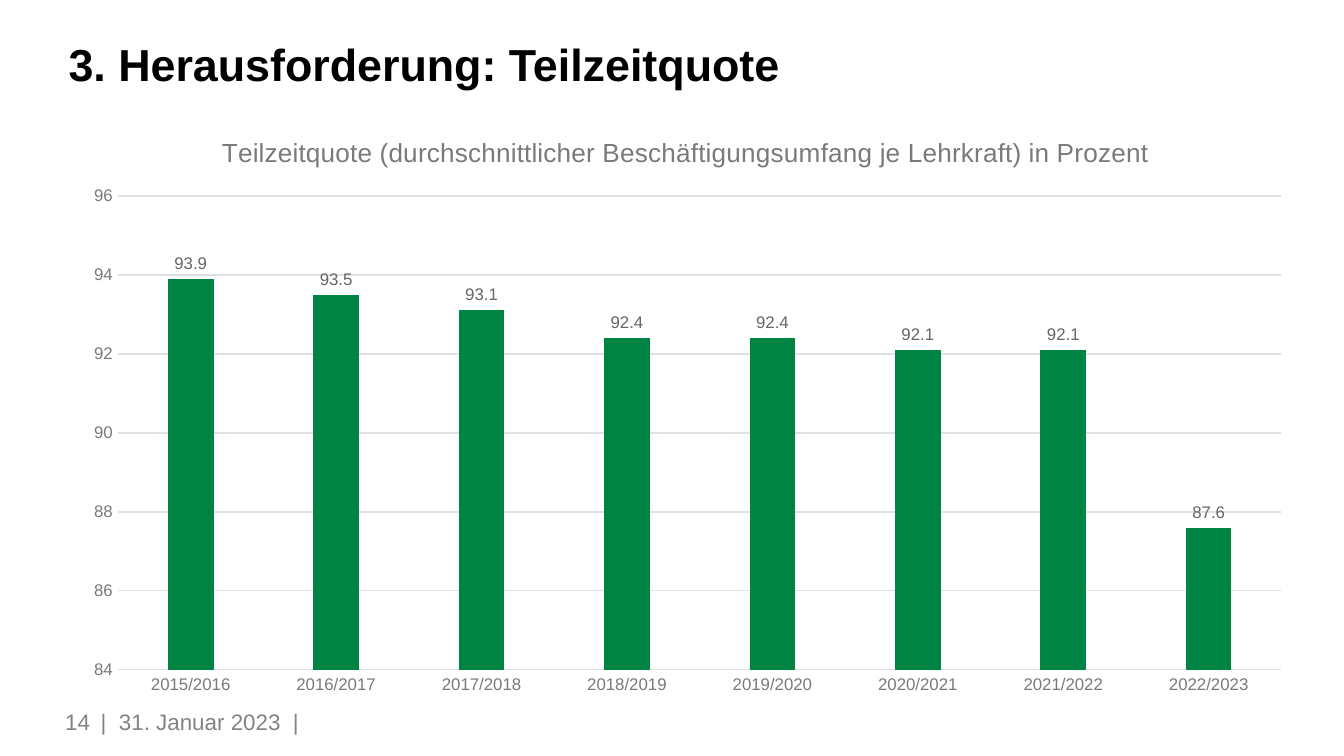
import lxml.etree
import pptx
import pptx.chart.data
import pptx.dml.color
import pptx.enum.chart
import pptx.enum.text
import pptx.oxml.ns
import pptx.util

Inches, Pt = pptx.util.Inches, pptx.util.Pt
Align, Anchor = pptx.enum.text.PP_ALIGN, pptx.enum.text.MSO_ANCHOR
qn = pptx.oxml.ns.qn

TITLE = "3. Herausforderung: Teilzeitquote"
PAGE = "14"
DATE = "|  31. Januar 2023  |"
CHART_TITLE = "Teilzeitquote (durchschnittlicher Beschäftigungsumfang je Lehrkraft) in Prozent"
SERIES = "Series 1"
QUOTAS = {
    "2015/2016": 93.9, "2016/2017": 93.5, "2017/2018": 93.1, "2018/2019": 92.4,
    "2019/2020": 92.4, "2020/2021": 92.1, "2021/2022": 92.1, "2022/2023": 87.6,
}
COLORS = {
    "title": "000000", "footer": "828480", "bar": "008444", "axis": "7A7A7A",
    "grid": "E0E0E0", "label": "666666", "chart": "333333",
}
FONT = "Arial"


def rgb(name):
    return pptx.dml.color.RGBColor.from_string(COLORS[name])


def style(font, size, color, bold=False):
    font.name, font.size, font.bold = FONT, Pt(size), bold
    font.color.rgb = rgb(color)


def write(sp, text, size, color, bold=False, align=Align.LEFT, anchor=Anchor.MIDDLE):
    tf = sp.text_frame
    tf.word_wrap = True
    tf.auto_size = pptx.enum.text.MSO_AUTO_SIZE.NONE
    tf.margin_left = tf.margin_right = tf.margin_top = tf.margin_bottom = 0
    tf.vertical_anchor = anchor
    p = tf.paragraphs[0]
    p.alignment = align
    r = p.add_run()
    r.text = text
    style(r.font, size, color, bold)


def place(sp, *box):
    sp.left, sp.top, sp.width, sp.height = map(Inches, box)


def set_layout(parent, after=None, inner=False, **fractions):
    """Fix the position of a chart part, in fractions of the chart's size."""
    for old in parent.findall(qn("c:layout")):
        parent.remove(old)
    layout = lxml.etree.Element(qn("c:layout"))
    manual = lxml.etree.SubElement(layout, qn("c:manualLayout"))
    settings = {"layoutTarget": "inner"} if inner else {}
    settings.update(xMode="edge", yMode="edge", **fractions)
    for tag, value in settings.items():
        lxml.etree.SubElement(manual, qn("c:" + tag)).set("val", str(value))
    parent.insert(0 if after is None else parent.index(after) + 1, layout)


def style_axis(axis):
    style(axis.tick_labels.font, 9, "axis")
    axis.major_tick_mark = axis.minor_tick_mark = pptx.enum.chart.XL_TICK_MARK.NONE


def style_line(line):
    line.color.rgb = rgb("grid")
    line.width = Pt(0.75)


def add_quota_chart(s):
    data = pptx.chart.data.CategoryChartData(number_format="0.0")
    data.categories = list(QUOTAS)
    data.add_series(SERIES, list(QUOTAS.values()))
    box = map(Inches, (0.51, 0.84, 9.21, 4.41))
    chart = s.shapes.add_chart(
        pptx.enum.chart.XL_CHART_TYPE.COLUMN_CLUSTERED, *box, data).chart
    style(chart.font, 10, "chart")
    chart.has_legend = False

    chart.has_title = True
    title = chart.chart_title
    p = title.text_frame.paragraphs[0]
    r = p.add_run()
    r.text = CHART_TITLE
    style(r.font, 14, "axis")
    title.include_in_layout = False
    c_title = title._element
    set_layout(c_title, after=c_title.find(qn("c:tx")), x=0.12, y=0.03)
    set_layout(chart._chartSpace.chart.plotArea, inner=True,
               x=0.04, y=0.14, w=0.94, h=0.8)

    style_axis(chart.category_axis)
    style_line(chart.category_axis.format.line)
    values = chart.value_axis
    style_axis(values)
    values.minimum_scale, values.maximum_scale, values.major_unit = 84, 96, 2
    values.tick_labels.number_format = "0"
    values.tick_labels.number_format_is_linked = False
    values.format.line.fill.background()
    style_line(values.major_gridlines.format.line)

    plot = chart.plots[0]
    plot.gap_width, plot.overlap = 219, -27
    plot.vary_by_categories = False
    series = plot.series[0]
    series.format.fill.solid()
    series.format.fill.fore_color.rgb = rgb("bar")
    labels = series.data_labels
    labels.show_value = True
    labels.number_format = "0.0"
    labels.number_format_is_linked = False
    labels.position = pptx.enum.chart.XL_LABEL_POSITION.OUTSIDE_END
    style(labels.font, 9, "label")


def main():
    prs = pptx.Presentation()
    prs.slide_width = Inches(10)
    prs.slide_height = prs.slide_width * 9 // 16
    s = prs.slides.add_slide(prs.slide_layouts[5])

    place(s.shapes.title, 0.51, 0.26, 7.25, 0.41)
    write(s.shapes.title, TITLE, 24, "title", bold=True, anchor=Anchor.BOTTOM)
    for text, left, width, align in (
        (DATE, 0.75, 4.96, Align.LEFT),
        (PAGE, 0, 0.67, Align.RIGHT),
    ):
        sp = s.shapes.add_textbox(*map(Inches, (left, 5.11, width, 0.52)))
        write(sp, text, 12, "footer", align=align)
    add_quota_chart(s)
    prs.save("out.pptx")


if __name__ == "__main__":
    main()
